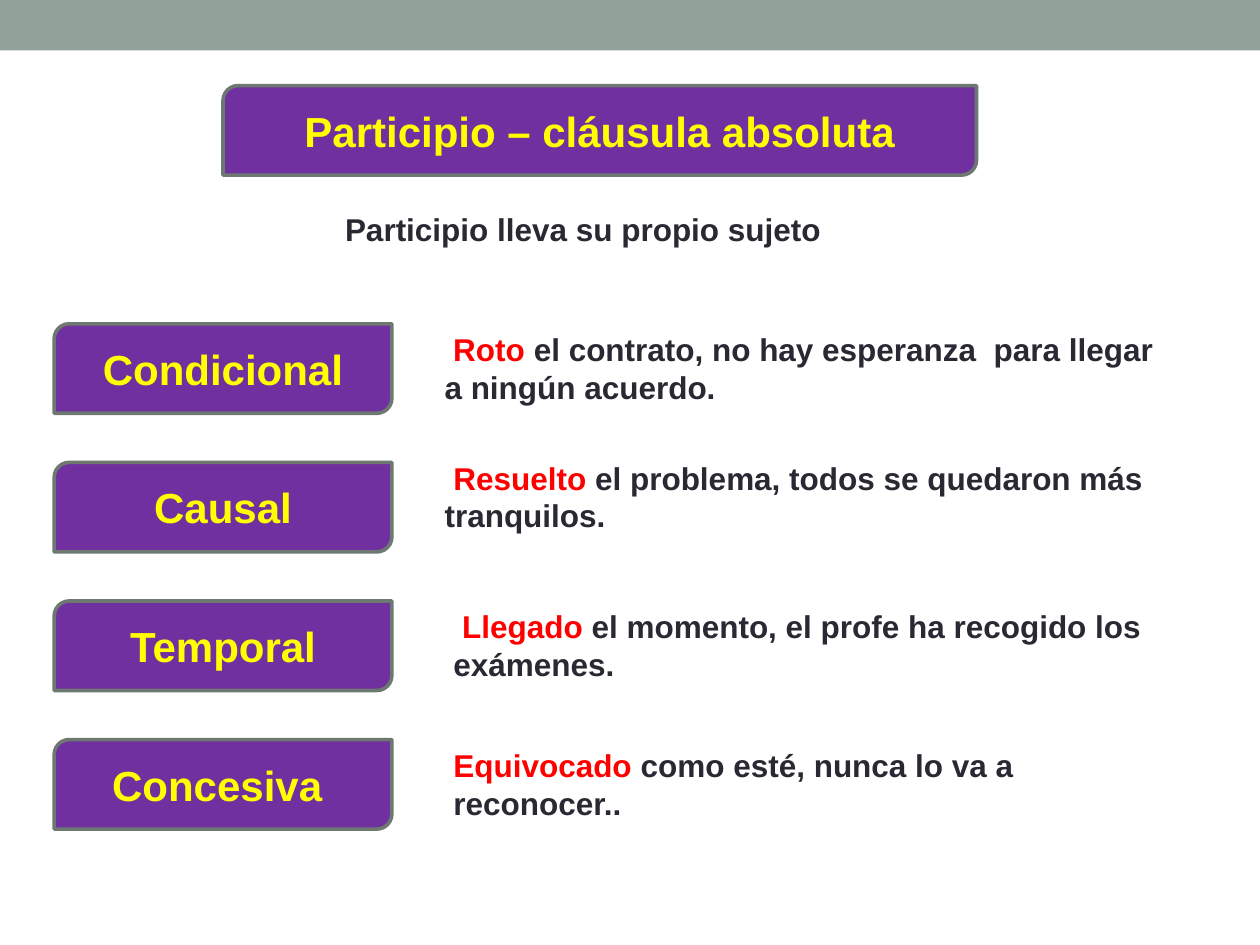
import pptx
import pptx.util
import pptx.dml.color
import pptx.enum.shapes
import pptx.enum.text

COLORS = {"band": "93A299", "plate": "7030A0", "border": "6D7871",
          "label": "FFFF00", "participle": "FF0000", "body": "292934"}
FONT = "Arial"
LABEL_SIZE, BODY_SIZE = 24, 18

TITLE = "Participio – cláusula absoluta"
SUBTITLE = "Participio lleva su propio sujeto"
# label, participle, rest of the example, example left, width, shift from row top
CLAUSES = [
    ("Condicional", " Roto ", "el contrato, no hay esperanza  para llegar a ningún acuerdo.",
     3.43, 5.87, 0),
    ("Causal", " Resuelto ", "el problema, todos se quedaron más tranquilos.",
     3.43, 6.22, -0.08),
    ("Temporal", " Llegado ", "el momento, el profe ha recogido los exámenes.",
     3.5, 5.71, 0),
    ("Concesiva ", "Equivocado ", "como esté, nunca lo va a reconocer..",
     3.5, 5.71, 0),
]

SLIDE_WIDTH, SLIDE_HEIGHT = 10, 7.5
BAND_HEIGHT = 0.4
PLATE_HEIGHT = 0.71
LABEL_LEFT, LABEL_WIDTH = 0.43, 2.68
FIRST_ROW, ROW_STEP = 2.57, 1.1

SHAPES = pptx.enum.shapes.MSO_SHAPE


def color(name):
    return pptx.dml.color.RGBColor.from_string(COLORS[name])


def inches(*lengths):
    return [pptx.util.Inches(length) for length in lengths]


def add_span(para, text, size, color_name):
    span = para.add_run()
    span.text = text
    span.font.name = FONT
    span.font.size = pptx.util.Pt(size)
    span.font.bold = True
    span.font.color.rgb = color(color_name)


def add_filled(page, kind, place, fill):
    shape = page.shapes.add_shape(kind, *inches(*place))
    shape.shadow.inherit = False
    shape.fill.solid()
    shape.fill.fore_color.rgb = color(fill)
    shape.line.fill.background()
    return shape


def add_plate(page, text, left, top, width):
    """Add a purple plate with two rounded corners and a centred label."""
    plate = add_filled(page, SHAPES.ROUND_2_DIAG_RECTANGLE,
                       (left, top, width, PLATE_HEIGHT), "plate")
    plate.line.color.rgb = color("border")
    plate.line.width = pptx.util.Pt(2.08)
    plate.text_frame.vertical_anchor = pptx.enum.text.MSO_ANCHOR.MIDDLE
    para = plate.text_frame.paragraphs[0]
    para.alignment = pptx.enum.text.PP_ALIGN.CENTER
    add_span(para, text, LABEL_SIZE, "label")


def add_sentence(page, spans, *place):
    box = page.shapes.add_textbox(*inches(*place))
    box.text_frame.word_wrap = True
    for text, color_name in spans:
        add_span(box.text_frame.paragraphs[0], text, BODY_SIZE, color_name)


def main():
    deck = pptx.Presentation()
    deck.slide_width, deck.slide_height = inches(SLIDE_WIDTH, SLIDE_HEIGHT)
    page = deck.slides.add_slide(deck.slide_layouts[6])

    add_filled(page, SHAPES.RECTANGLE, (0, 0, SLIDE_WIDTH, BAND_HEIGHT), "band")
    add_plate(page, TITLE, 1.77, 0.68, 5.98)
    add_sentence(page, [(SUBTITLE, "body")], 2.64, 1.62, 4.17, 0.4)

    for row, (label, participle, rest, left, width, shift) in enumerate(CLAUSES):
        top = FIRST_ROW + row * ROW_STEP
        add_plate(page, label, LABEL_LEFT, top, LABEL_WIDTH)
        add_sentence(page, [(participle, "participle"), (rest, "body")],
                     left, top + shift, width, PLATE_HEIGHT)

    deck.save("out.pptx")


if __name__ == "__main__":
    main()
